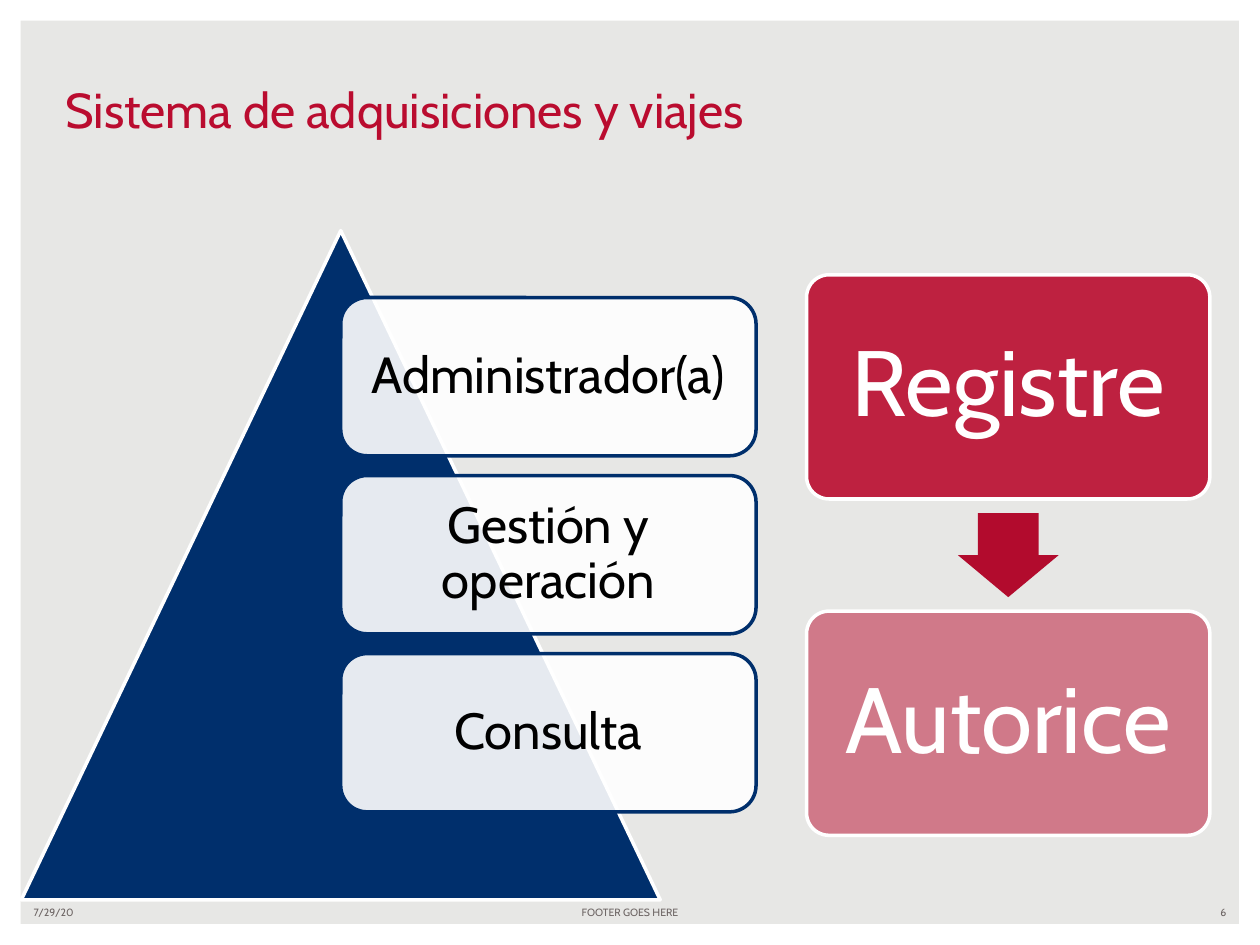
from dataclasses import dataclass

from lxml.etree import SubElement
from pptx import Presentation
from pptx.dml.color import RGBColor
from pptx.enum.shapes import MSO_SHAPE
from pptx.enum.text import MSO_ANCHOR, PP_ALIGN
from pptx.oxml.ns import qn
from pptx.util import Cm, Pt


@dataclass(frozen=True)
class Theme:
    """Colours, font and type sizes of the slide."""

    font: str = "Cabin"
    paper: str = "E7E7E5"
    white: str = "FFFFFF"
    black: str = "000000"
    navy: str = "002F6C"
    red: str = "BA0C2F"
    arrow: str = "B20B2D"
    grey: str = "6C6463"
    title_size: int = 28
    footer_size: int = 6
    level_size: int = 29
    step_size: int = 53
    line_width: int = 2


@dataclass(frozen=True)
class Box:
    """A rectangle in centimetres."""

    left: float
    top: float
    width: float
    height: float

    def lengths(self):
        """Return the position and size as slide lengths."""
        return Cm(self.left), Cm(self.top), Cm(self.width), Cm(self.height)


THEME = Theme()


def write(frame, text, size, color, align=PP_ALIGN.LEFT, anchor=MSO_ANCHOR.MIDDLE):
    """Put one formatted paragraph into a text frame and return it."""
    frame.word_wrap = True
    frame.vertical_anchor = anchor
    frame.text = text
    paragraph = frame.paragraphs[0]
    paragraph.alignment = align
    font = paragraph.runs[0].font
    font.name, font.size = THEME.font, Pt(size)
    font.color.rgb = RGBColor.from_string(color)
    return paragraph


def add_panel(slide, kind, box, fill, line=None, opacity=100):
    """Add a flat preset shape with an optional outline and transparency."""
    panel = slide.shapes.add_shape(kind, *box.lengths())
    panel.shadow.inherit = False
    panel.fill.solid()
    panel.fill.fore_color.rgb = RGBColor.from_string(fill)
    if opacity < 100:
        color = panel.fill._xPr.find(qn("a:solidFill"))[0]
        SubElement(color, qn("a:alpha"), val=str(opacity * 1000))
    if line:
        panel.line.color.rgb = RGBColor.from_string(line)
        panel.line.width = Pt(THEME.line_width)
    else:
        panel.line.fill.background()
    return panel


def add_label(panel, text, size, color, inset):
    """Centre a label inside a panel."""
    frame = panel.text_frame
    frame.margin_left = frame.margin_right = Cm(inset)
    frame.margin_top = frame.margin_bottom = Cm(inset)
    write(frame, text, size, color, PP_ALIGN.CENTER).line_spacing = 0.9


def add_backdrop(slide, box):
    """Fill the background and frame the slide in white."""
    slide.background.fill.solid()
    slide.background.fill.fore_color.rgb = RGBColor.from_string(THEME.paper)
    border = add_panel(slide, MSO_SHAPE.FRAME, box, THEME.white)
    border.adjustments[0] = 0.022


def add_title(slide, box, text):
    """Add the slide title at the bottom of its box."""
    title = slide.shapes.add_textbox(*box.lengths())
    write(title.text_frame, text, THEME.title_size, THEME.red, anchor=MSO_ANCHOR.BOTTOM)


def add_footer(slide, box, date, note, number):
    """Add date, note and slide number along the footer box."""
    side, middle = 5.92, 8.05
    parts = (
        (date, 0, side, PP_ALIGN.LEFT),
        (note, (box.width - middle) / 2, middle, PP_ALIGN.CENTER),
        (number, box.width - side, side, PP_ALIGN.RIGHT),
    )
    for text, offset, width, align in parts:
        place = Box(box.left + offset, box.top, width, box.height)
        part = slide.shapes.add_textbox(*place.lengths())
        write(part.text_frame, text, THEME.footer_size, THEME.grey, align)


def add_pyramid(slide, box, levels):
    """Add a triangle with evenly stacked level boxes starting at its axis."""
    add_panel(slide, MSO_SHAPE.ISOSCELES_TRIANGLE, box, THEME.navy, THEME.white)
    height = 3.19
    pitch = height * 9 / 8
    for index, level in enumerate(levels):
        place = Box(box.left + box.width / 2, box.top + box.height / 10 + index * pitch,
                    box.width * 0.65, height)
        panel = add_panel(slide, MSO_SHAPE.ROUNDED_RECTANGLE, place,
                          THEME.white, THEME.navy, 90)
        add_label(panel, level, THEME.level_size, THEME.black, 0.3)


def add_flow(slide, box, first, second):
    """Add two step cards with a down arrow between them."""
    card_height = box.height * 0.4
    steps = ((first, box.top, 90), (second, box.top + box.height - card_height, 50))
    for step, top, opacity in steps:
        card = add_panel(slide, MSO_SHAPE.ROUNDED_RECTANGLE,
                         Box(box.left, top, box.width, card_height),
                         THEME.red, THEME.white, opacity)
        card.adjustments[0] = 0.1
        add_label(card, step, THEME.step_size, THEME.white, 0.56)
    width, height = box.width / 4, box.height * 0.15
    place = Box(box.left + (box.width - width) / 2,
                box.top + (box.height - height) / 2, width, height)
    arrow = add_panel(slide, MSO_SHAPE.DOWN_ARROW, place, THEME.arrow)
    arrow.adjustments[0], arrow.adjustments[1] = 0.6, 0.5


def main():
    """Build and save the slide."""
    presentation = Presentation()
    page = Box(0, 0, 25.4, 19.05)
    presentation.slide_width, presentation.slide_height = Cm(page.width), Cm(page.height)
    slide = presentation.slides.add_slide(presentation.slide_layouts[6])
    add_backdrop(slide, page)
    add_footer(slide, Box(0.43, 18.14, 24.54, 0.51), "7/29/20", "FOOTER GOES HERE", "6")
    add_pyramid(slide, Box(0.43, 4.65, 12.88, 13.49),
                ("Administrador(a)", "Gestión y operación", "Consulta"))
    add_flow(slide, Box(16.26, 5.54, 8.13, 11.3), "Registre", "Autorice")
    add_title(slide, Box(1.07, 1.47, 21.59, 1.45), "Sistema de adquisiciones y viajes")
    presentation.save("out.pptx")


if __name__ == "__main__":
    main()
